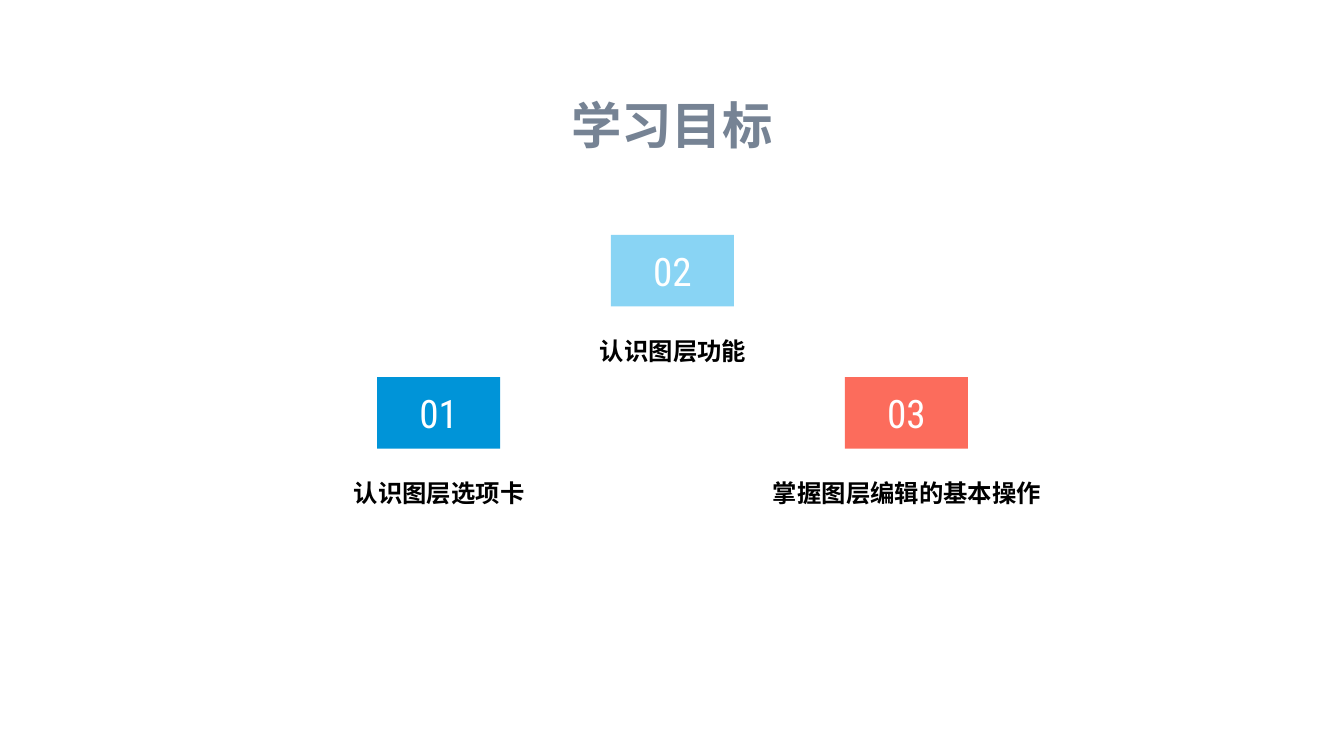
from pptx import Presentation
from pptx.dml.color import RGBColor
from pptx.enum.shapes import MSO_SHAPE
from pptx.enum.text import MSO_ANCHOR, MSO_AUTO_SIZE, PP_ALIGN
from pptx.util import Inches, Pt

RECTANGLE = MSO_SHAPE.RECTANGLE
TOP, MIDDLE, BOTTOM = MSO_ANCHOR.TOP, MSO_ANCHOR.MIDDLE, MSO_ANCHOR.BOTTOM
CENTER = PP_ALIGN.CENTER
NO_AUTOFIT = MSO_AUTO_SIZE.NONE

COLORS = {
    "title": "768394",
    "label": "000000",
    "number": "FFFFFF",
    "blue": "0094D8",
    "sky": "89D4F4",
    "coral": "FC6C5C",
}
TEXT_FONT = "Arial"
NUMBER_FONT = "Roboto Condensed"


class GoalSlide:
    """Holds the style and the current slide."""

    def __init__(self, deck):
        self.page = deck.slides.add_slide(deck.slide_layouts[5])

    def color(self, name):
        return RGBColor.from_string(COLORS[name])

    def set_text(self, shape, text, font, size, color, bold, anchor):
        frame = shape.text_frame
        frame.text = text
        frame.word_wrap = False
        frame.auto_size = NO_AUTOFIT
        frame.vertical_anchor = anchor
        para = frame.paragraphs[0]
        para.alignment = CENTER
        para.font.name = font
        para.font.size = Pt(size)
        para.font.bold = bold
        para.font.color.rgb = self.color(color)

    def title(self, text, left, top, width, height):
        title = self.page.shapes.title
        title.left, title.top = Inches(left), Inches(top)
        title.width, title.height = Inches(width), Inches(height)
        self.set_text(title, text, TEXT_FONT, 36, "title", True, TOP)

    def number_box(self, text, fill, left, top, width, height):
        box = self.page.shapes.add_shape(
            RECTANGLE, Inches(left), Inches(top), Inches(width), Inches(height))
        box.shadow.inherit = False
        box.fill.solid()
        box.fill.fore_color.rgb = self.color(fill)
        box.line.fill.background()
        self.set_text(box, text, NUMBER_FONT, 28, "number", False, MIDDLE)

    def label(self, text, left, top, width, height):
        box = self.page.shapes.add_textbox(
            Inches(left), Inches(top), Inches(width), Inches(height))
        self.set_text(box, text, TEXT_FONT, 17.4, "label", True, BOTTOM)


def main():
    deck = Presentation()
    deck.slide_width, deck.slide_height = Inches(13.33), Inches(7.5)
    slide = GoalSlide(deck)

    # Heading
    slide.title("学习目标", 4.96, 0.88, 3.41, 0.78)

    # Three goals at equal steps, the middle one raised
    goals = [
        ("认识图层选项卡", "blue", 3.74),
        ("认识图层功能", "sky", 2.33),
        ("掌握图层编辑的基本操作", "coral", 3.74),
    ]
    first_left, step = 3.74, 2.32
    for index, (text, fill, top) in enumerate(goals):
        left = first_left + index * step
        slide.number_box(f"{index + 1:02d}", fill, left, top, 1.22, 0.71)
        slide.label(text, left - 0.54, top + 0.92, 2.31, 0.42)

    deck.save("out.pptx")


if __name__ == "__main__":
    main()
